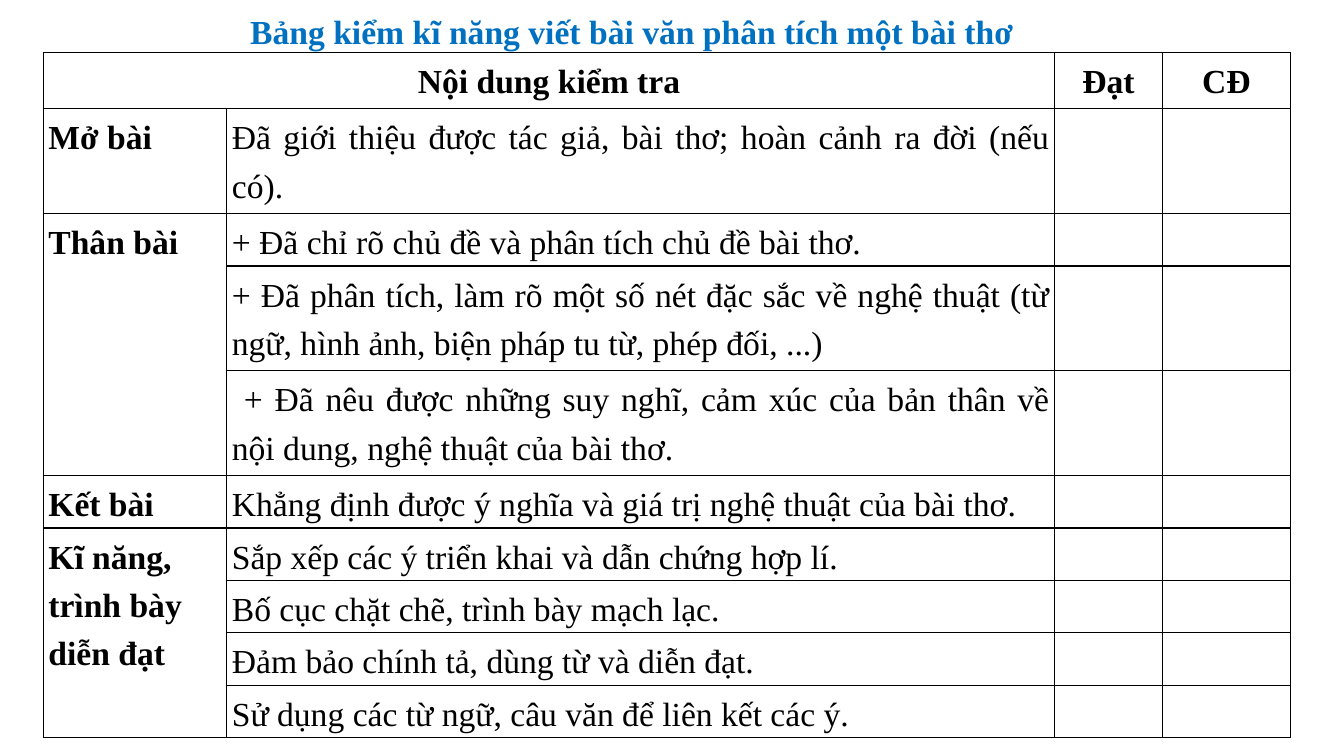
"""Build a one-slide checklist for essays that analyse a poem."""
from lxml import etree
from pptx import Presentation, util as u
from pptx.dml.color import RGBColor
from pptx.enum import text
from pptx.oxml.ns import qn

FONT = "Times New Roman"
INK, BLUE = "000000", "0070C0"
LEFT, MID, JUST = (text.PP_ALIGN.LEFT, text.PP_ALIGN.CENTER,
                   text.PP_ALIGN.JUSTIFY)
COLS = (1.82, 8.21, 1.07, 1.27)
HEAD, LINE = 0.56, 0.52
TITLE = "Bảng kiểm kĩ năng viết bài văn phân tích một bài thơ"
HEADS = ("Nội dung kiểm tra", "", "Đạt", "CĐ")
PARTS = (
    ("Mở bài", (
        ("Đã giới thiệu được tác giả, bài thơ; hoàn cảnh ra đời (nếu có).",
         2, 0),)),
    ("Thân bài", (
        ("+ Đã chỉ rõ chủ đề và phân tích chủ đề bài thơ.", 1, 0),
        ("+ Đã phân tích, làm rõ một số nét đặc sắc về nghệ thuật "
         "(từ ngữ, hình ảnh, biện pháp tu từ, phép đối, ...)", 2, 0),
        ("+ Đã nêu được những suy nghĩ, cảm xúc của bản thân về "
         "nội dung, nghệ thuật của bài thơ.", 2, 0.12))),
    ("Kết bài", (
        ("Khẳng định được ý nghĩa và giá trị nghệ thuật của bài thơ.",
         1, 0),)),
    ("Kĩ năng, trình bày diễn đạt", (
        ("Sắp xếp các ý triển khai và dẫn chứng hợp lí.", 1, 0),
        ("Bố cục chặt chẽ, trình bày mạch lạc.", 1, 0),
        ("Đảm bảo chính tả, dùng từ và diễn đạt.", 1, 0),
        ("Sử dụng các từ ngữ, câu văn để liên kết các ý.", 1, 0))),
)


def color(code):
    return RGBColor.from_string(code)


def write(frame, words, align, bold=True, ink=INK, indent=0):
    para = frame.paragraphs[0]
    para.text = words
    para.alignment = align
    para.line_spacing = 1.3
    if indent:
        para._p.get_or_add_pPr().set("indent", str(u.Inches(indent)))
    for run in para.runs:
        font = run.font
        font.name, font.size, font.bold = FONT, u.Pt(24), bold
        font.color.rgb = color(ink)


def frame_cell(cell):
    props = cell._tc.get_or_add_tcPr()
    for side in ("lnL", "lnR", "lnT", "lnB"):
        line = etree.SubElement(props, qn("a:" + side), w=str(u.Pt(1)))
        fill = etree.SubElement(line, qn("a:solidFill"))
        etree.SubElement(fill, qn("a:srgbClr"), val=INK)
    cell.fill.background()
    cell.margin_left = cell.margin_right = u.Inches(0.05)
    cell.margin_top = cell.margin_bottom = 0


def add_grid(slide):
    lines = [n for _, items in PARTS for _, n, _ in items]
    highs = [HEAD] + [LINE * n for n in lines]
    shape = slide.shapes.add_table(
        len(highs), len(COLS), u.Inches(0.43), u.Inches(0.52),
        u.Inches(sum(COLS)), u.Inches(sum(highs)))
    grid = shape.table
    grid.first_row = grid.horz_banding = False
    for col, wide in zip(grid.columns, COLS):
        col.width = u.Inches(wide)
    for row, high in zip(grid.rows, highs):
        row.height = u.Inches(high)
    for cell in grid.iter_cells():
        frame_cell(cell)
    return grid


def fill_grid(grid):
    grid.cell(0, 0).merge(grid.cell(0, 1))
    for col, words in enumerate(HEADS):
        if words:
            write(grid.cell(0, col).text_frame, words, MID)
    row = 1
    for name, items in PARTS:
        label = grid.cell(row, 0)
        if len(items) > 1:
            label.merge(grid.cell(row + len(items) - 1, 0))
        write(label.text_frame, name, LEFT)
        for words, _, indent in items:
            write(grid.cell(row, 1).text_frame, words, JUST, False,
                  indent=indent)
            row += 1


def add_title(slide):
    box = slide.shapes.add_textbox(
        u.Inches(2.3), u.Inches(-0.06), u.Inches(7.93), u.Inches(0.57))
    box.text_frame.word_wrap = False
    write(box.text_frame, TITLE, MID, ink=BLUE)


def main():
    deck = Presentation()
    deck.slide_width, deck.slide_height = u.Inches(13.33), u.Inches(7.5)
    slide = deck.slides.add_slide(deck.slide_layouts[6])
    fill_grid(add_grid(slide))
    add_title(slide)
    deck.save("out.pptx")


if __name__ == "__main__":
    main()
